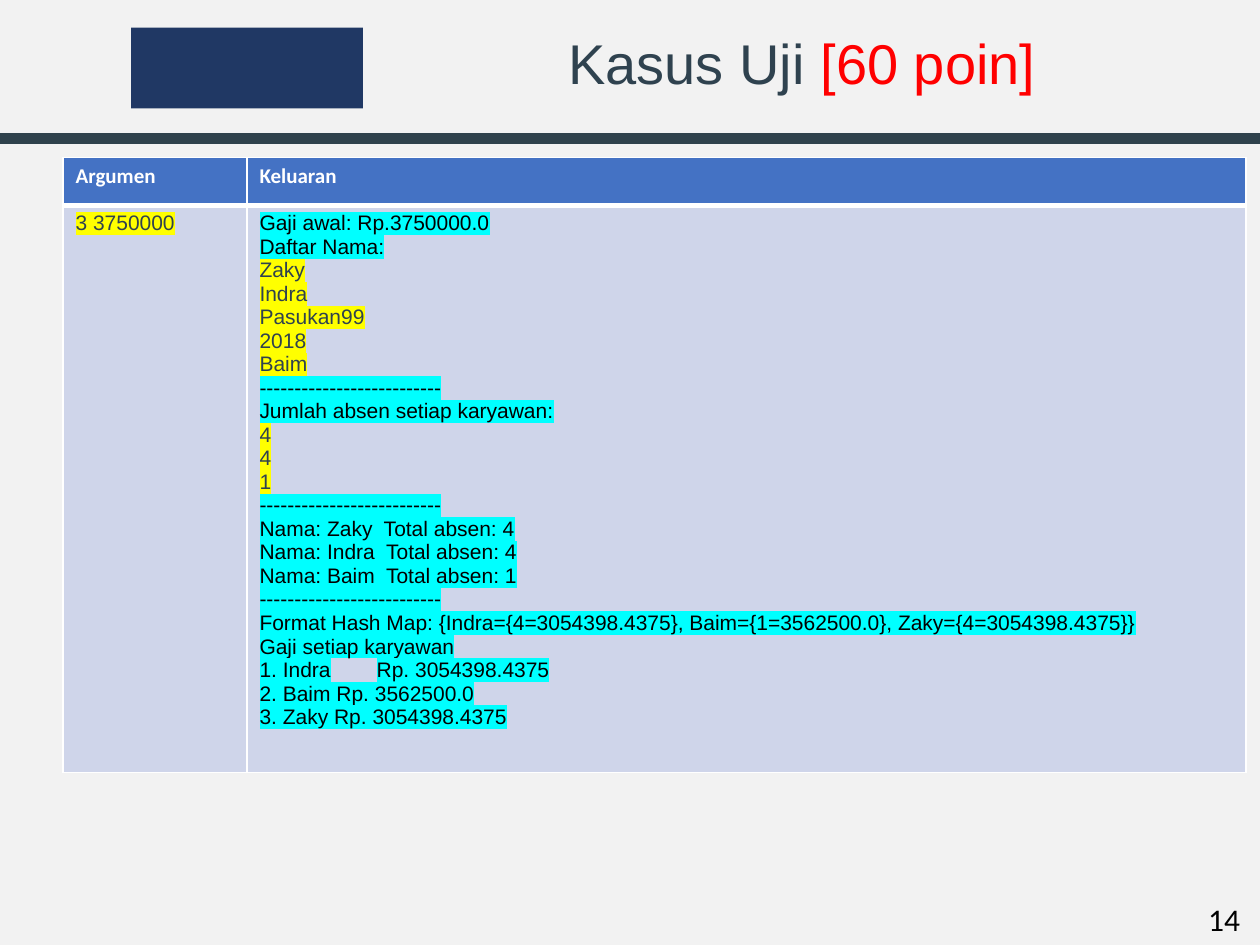
from lxml import etree
from pptx import Presentation
from pptx import util as u
from pptx.dml.color import RGBColor
from pptx.enum import shapes, text
from pptx.oxml import ns

PAPER = RGBColor(0xF2, 0xF2, 0xF2)
NAVY = RGBColor(0x20, 0x38, 0x64)
SLATE = RGBColor(0x2F, 0x42, 0x4F)
RULE = RGBColor(0x2F, 0x42, 0x4C)
RED = RGBColor(0xFF, 0x00, 0x00)
BLACK = RGBColor(0x00, 0x00, 0x00)
WHITE = RGBColor(0xFF, 0xFF, 0xFF)
HEADER = RGBColor(0x44, 0x72, 0xC4)
BODY = RGBColor(0xCF, 0xD5, 0xEA)
YELLOW = RGBColor(0xFF, 0xFF, 0x00)
CYAN = RGBColor(0x00, 0xFF, 0xFF)


def sub(parent, tag, **attrs):
    return etree.SubElement(parent, ns.qn(tag), **attrs)


class Deck:
    """Holds the style and the current slide."""

    sans, label = "Arial", "Calibri"

    def __init__(self, width, height):
        self.prs = Presentation()
        self.prs.slide_width, self.prs.slide_height = u.Inches(width), u.Inches(height)
        self.s = self.prs.slides.add_slide(self.prs.slide_layouts[6])
        self.s.background.fill.solid()
        self.s.background.fill.fore_color.rgb = PAPER

    def run(self, p, words, color, highlight=None, **font):
        r = p.add_run()
        r.text = words
        r.font.color.rgb = color
        if highlight is not None:
            mark = etree.Element(ns.qn("a:highlight"))
            sub(mark, "a:srgbClr", val=str(highlight))
            r.font._element.find(ns.qn("a:solidFill")).addnext(mark)
        for name, value in font.items():
            setattr(r.font, name, value)

    def text(self, box, runs, wrap=False, align=text.PP_ALIGN.CENTER, line=1.0,
             anchor=text.MSO_ANCHOR.TOP):
        tf = self.s.shapes.add_textbox(*map(u.Inches, box)).text_frame
        tf.word_wrap, tf.vertical_anchor = wrap, anchor
        p = tf.paragraphs[0]
        p.alignment, p.line_spacing = align, line
        for words, color, style in runs:
            self.run(p, words, color, **style)

    def block(self, box, color):
        sp = self.s.shapes.add_shape(
            shapes.MSO_SHAPE.RECTANGLE, *map(u.Inches, box))
        sp.shadow.inherit = False
        sp.fill.solid()
        sp.fill.fore_color.rgb = color
        sp.line.fill.background()

    def line(self, x1, y1, x2, y2, color, width):
        c = self.s.shapes.add_connector(
            shapes.MSO_CONNECTOR.STRAIGHT, *map(u.Inches, (x1, y1, x2, y2)))
        c.line.color.rgb, c.line.width = color, u.Pt(width)
        sub(c._element.spPr, "a:effectLst")

    def table(self, x, y, cols, rows):
        size = u.Inches(sum(cols)), u.Inches(sum(rows))
        t = self.s.shapes.add_table(
            len(rows), len(cols), u.Inches(x), u.Inches(y), *size).table
        for col, width in zip(t.columns, cols):
            col.width = u.Inches(width)
        for row, height in zip(t.rows, rows):
            row.height = u.Inches(height)
        return t

    def cell(self, cell, lines, fill, borders, tab=None, **font):
        tcPr = cell._tc.get_or_add_tcPr()
        for side, width in borders.items():
            ln = sub(tcPr, f"a:ln{side}", w=str(u.Pt(width)))
            sub(sub(ln, "a:solidFill"), "a:srgbClr", val=str(WHITE))
        cell.fill.solid()
        cell.fill.fore_color.rgb = fill
        tf = cell.text_frame
        for i, (words, color, highlight) in enumerate(lines):
            p = tf.add_paragraph() if i else tf.paragraphs[0]
            if "\t" in words:
                stops = sub(p._p.get_or_add_pPr(), "a:tabLst")
                sub(stops, "a:tab", pos=str(u.Inches(tab)), algn="l")
            self.run(p, words, color, highlight, size=u.Pt(12), **font)


def given(*lines):
    return [(line, SLATE, YELLOW) for line in lines]


def printed(*lines):
    return [(line, BLACK, CYAN) for line in lines]


def main():
    d = Deck(10, 7.5)

    # Slide number
    d.text((9.49, 7.09, 0.5, 0.4), [("14", BLACK, dict(size=u.Pt(18), name=d.label))],
           align=text.PP_ALIGN.LEFT)

    # Header block and rule
    d.block((1.04, 0.22, 1.84, 0.64), NAVY)
    d.line(0, 1.1, 10, 1.1, RULE, 6)

    # Title
    title = dict(size=u.Pt(32), name=d.sans)
    d.text((3.24, 0.23, 6.25, 0.6),
           [("Kasus Uji ", SLATE, title), ("[60 poin]", RED, title)],
           wrap=True, line=0.9, anchor=text.MSO_ANCHOR.MIDDLE)

    # Test case table
    t = d.table(0.5, 1.25, cols=(1.46, 7.93), rows=(0.38, 2.1))
    for i, heading in enumerate(("Argumen", "Keluaran")):
        d.cell(t.cell(0, i), [(heading, WHITE, None)], HEADER,
               dict(L=1, R=1, T=1, B=3), name=d.label, bold=True)

    divider = "-" * 26
    output = (
        printed("Gaji awal: Rp.3750000.0", "Daftar Nama:")
        + given("Zaky", "Indra", "Pasukan99", "2018", "Baim")
        + printed(divider, "Jumlah absen setiap karyawan:")
        + given("4", "4", "1")
        + printed(
            divider,
            "Nama: Zaky  Total absen: 4",
            "Nama: Indra  Total absen: 4",
            "Nama: Baim  Total absen: 1",
            divider,
            "Format Hash Map: {Indra={4=3054398.4375}, "
            "Baim={1=3562500.0}, Zaky={4=3054398.4375}}",
            "Gaji setiap karyawan",
            "1. Indra\tRp. 3054398.4375",
            "2. Baim Rp. 3562500.0",
            "3. Zaky Rp. 3054398.4375",
        )
    )
    for i, lines in enumerate((given("3 3750000"), output)):
        d.cell(t.cell(1, i), lines, BODY, dict(L=1, R=1, T=3, B=1),
               tab=0.93, name=d.sans, bold=False)

    d.prs.save("out.pptx")


if __name__ == "__main__":
    main()
